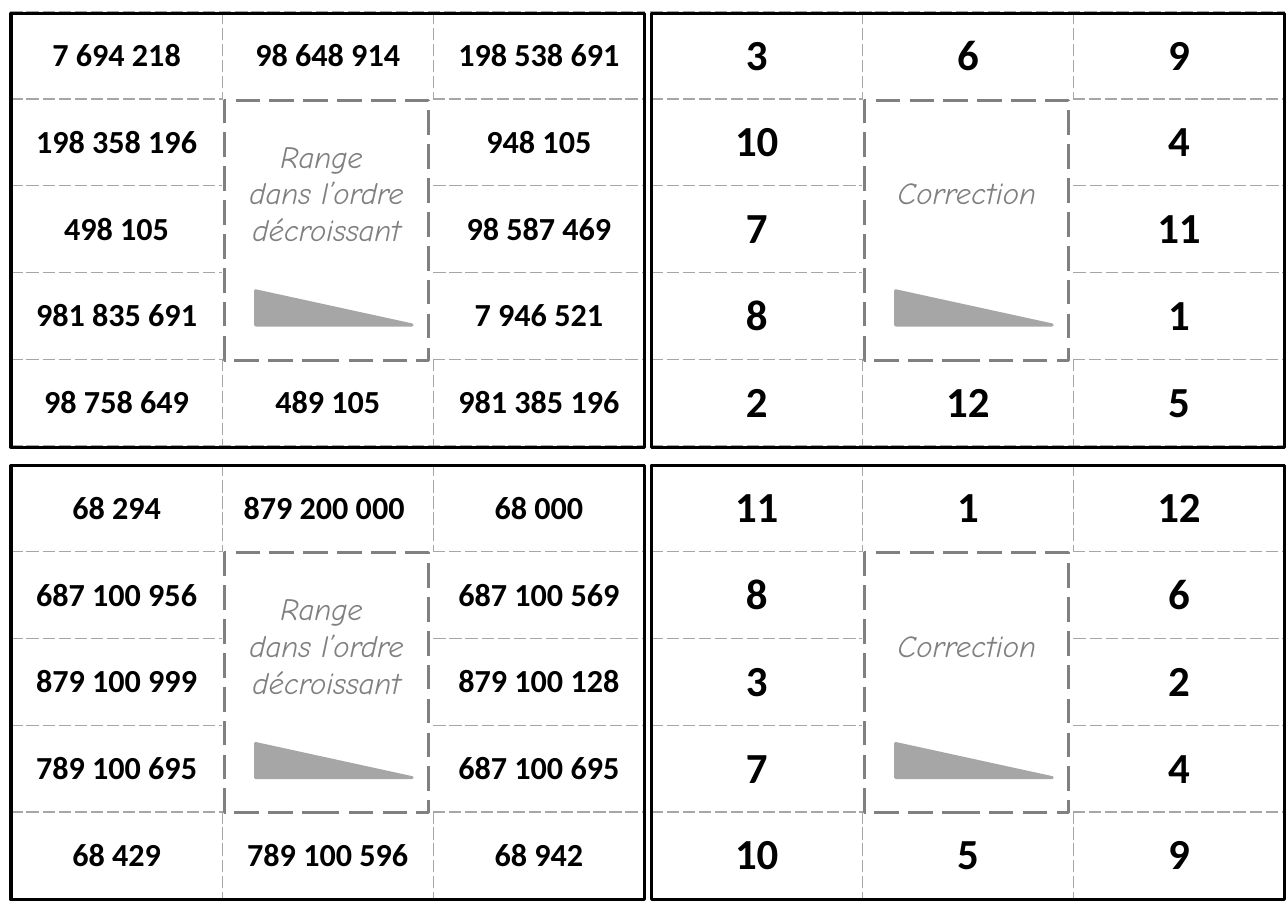
"""Build a sheet of four number-ordering cards with their corrections."""
import lxml.etree
import pptx
import pptx.dml.color
import pptx.enum.dml
import pptx.enum.shapes
import pptx.enum.text
import pptx.oxml.ns
import pptx.util

Inches, Pt = pptx.util.Inches, pptx.util.Pt
RGBColor = pptx.dml.color.RGBColor
SHAPE = pptx.enum.shapes.MSO_SHAPE
DASH = pptx.enum.dml.MSO_LINE.LONG_DASH
MIDDLE = pptx.enum.text.MSO_ANCHOR.MIDDLE
CENTER = pptx.enum.text.PP_ALIGN.CENTER
qn = pptx.oxml.ns.qn

BLACK = RGBColor(0x00, 0x00, 0x00)
GREY = RGBColor(0x80, 0x80, 0x80)
LIGHT_GREY = RGBColor(0xA6, 0xA6, 0xA6)

CARD_W, CARD_H = 5.75, 3.94
ROWS, COLS = 5, 3
HOLE = [(1, 1), (2, 1), (3, 1)]
SIDES = {"lnL": (0, -1), "lnR": (0, 1), "lnT": (-1, 0), "lnB": (1, 0)}
ORDER = ["Range ", "dans l’ordre", "décroissant"]
ANSWER = ["Correction"]

CARDS = [
    (0.1, 0.12, 21, ORDER, [
        ["7 694 218", "98 648 914", "198 538 691"],
        ["198 358 196", "", "948 105"],
        ["498 105", "", "98 587 469"],
        ["981 835 691", "", "7 946 521"],
        ["98 758 649", "489 105", "981 385 196"]]),
    (5.91, 0.12, 28, ANSWER, [
        ["3", "6", "9"],
        ["10", "", "4"],
        ["7", "", "11"],
        ["8", "", "1"],
        ["2", "12", "5"]]),
    (0.1, 4.23, 21, ORDER, [
        ["68 294", "879 200 000 ", "68 000"],
        ["687 100 956", "", "687 100 569"],
        ["879 100 999", "", "879 100 128"],
        ["789 100 695", "", "687 100 695"],
        ["68 429", "789 100 596", "68 942"]]),
    (5.91, 4.23, 28, ANSWER, [
        ["11", "1", "12"],
        ["8", "", "6"],
        ["3", "", "2"],
        ["7", "", "4"],
        ["10", "5", "9"]]),
]


def add_text(p, text, font, size, color):
    p.alignment = CENTER
    r = p.add_run()
    r.text = text
    r.font.name = font
    r.font.size = Pt(size)
    r.font.color.rgb = color
    return r


def add_outline(kind, left, top, width, height, color):
    sp = s.shapes.add_shape(kind, Inches(left), Inches(top), Inches(width), Inches(height))
    sp.shadow.inherit = False
    sp.fill.background()
    sp.line.color.rgb = color
    sp.line.width = Pt(2)
    return sp


prs = pptx.Presentation()
prs.slide_width = Inches(11.69)
prs.slide_height = Inches(8.27)
s = prs.slides.add_slide(prs.slide_layouts[6])

for left, top, size, label, numbers in CARDS:
    frame = s.shapes.add_table(ROWS, COLS, Inches(left), Inches(top - 0.01),
                               Inches(CARD_W), Inches(CARD_H))
    table = frame.table
    table.first_row = False
    table.horz_banding = False
    for row, line in enumerate(numbers):
        for col, number in enumerate(line):
            cell = table.cell(row, col)
            cell.vertical_anchor = MIDDLE
            if number:
                r = add_text(cell.text_frame.paragraphs[0], number, "Calibri", size, BLACK)
                r.font.bold = True
            tcPr = cell._tc.get_or_add_tcPr()
            for side, (down, right) in SIDES.items():
                ln = lxml.etree.SubElement(tcPr, qn("a:" + side), w=str(Pt(1)))
                if (row, col) in HOLE or (row + down, col + right) in HOLE:
                    lxml.etree.SubElement(ln, qn("a:noFill"))
                else:
                    fill = lxml.etree.SubElement(ln, qn("a:solidFill"))
                    lxml.etree.SubElement(fill, qn("a:srgbClr"), val=str(LIGHT_GREY))
                    lxml.etree.SubElement(ln, qn("a:prstDash"), val="lgDash")
            cell.fill.background()

    wedge = add_outline(SHAPE.RIGHT_TRIANGLE, left + 2.22, top + 2.52, 1.42, 0.31, LIGHT_GREY)
    wedge.fill.solid()
    wedge.fill.fore_color.rgb = LIGHT_GREY

    add_outline(SHAPE.RECTANGLE, left, top, CARD_W, CARD_H, BLACK)

    box = add_outline(SHAPE.RECTANGLE, left + 1.94, top + 0.79, 1.85, 2.36, GREY)
    box.line.dash_style = DASH
    tf = box.text_frame
    tf.word_wrap = True
    tf.vertical_anchor = MIDDLE
    tf.margin_bottom = Inches(0.73)
    for i, text in enumerate(label):
        p = tf.add_paragraph() if i else tf.paragraphs[0]
        r = add_text(p, text, "Comic Neue", 20, GREY)
        r.font.italic = True

prs.save("out.pptx")
